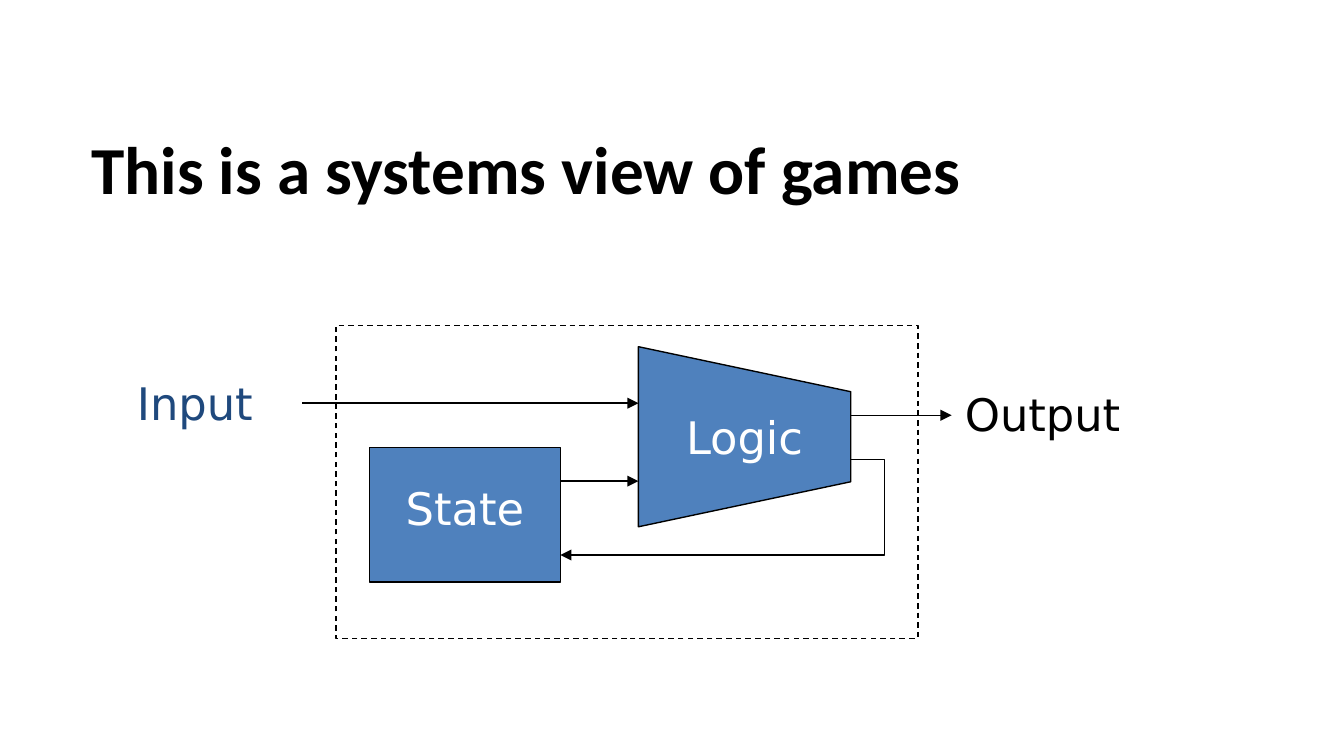
from lxml import etree
from pptx import Presentation
from pptx.dml.color import RGBColor
from pptx.enum.dml import MSO_LINE
from pptx.enum.shapes import MSO_CONNECTOR, MSO_SHAPE
from pptx.enum.text import MSO_ANCHOR, MSO_AUTO_SIZE, PP_ALIGN
from pptx.oxml.ns import qn
from pptx.util import Inches, Pt

BLACK = RGBColor(0x00, 0x00, 0x00)
WHITE = RGBColor(0xFF, 0xFF, 0xFF)
BLUE = RGBColor(0x4F, 0x81, 0xBD)
NAVY = RGBColor(0x1F, 0x49, 0x7D)
TITLE_FONT, LABEL_FONT = "Calibri", "DejaVu Sans"
STRAIGHT, ELBOW = MSO_CONNECTOR.STRAIGHT, MSO_CONNECTOR.ELBOW
RECTANGLE, DASH = MSO_SHAPE.RECTANGLE, MSO_LINE.DASH
LEFT, CENTER, TOP = PP_ALIGN.LEFT, PP_ALIGN.CENTER, MSO_ANCHOR.TOP
FIT_SHAPE, NO_FIT = MSO_AUTO_SIZE.SHAPE_TO_FIT_TEXT, MSO_AUTO_SIZE.NONE
LINE_WIDTH = Pt(0.75)


def write(frame, text, size=24, font=LABEL_FONT, color=BLACK, bold=False,
          align=LEFT, fit=FIT_SHAPE):
    frame.word_wrap = True
    frame.auto_size = fit
    frame.vertical_anchor = TOP
    paragraph = frame.paragraphs[0]
    paragraph.alignment = align
    run = paragraph.add_run()
    run.text = text
    run.font.size = Pt(size)
    run.font.name = font
    run.font.color.rgb = color
    run.font.bold = bold


def add_label(slide, text, left, top, width, **style):
    label = slide.shapes.add_textbox(Inches(left), Inches(top),
                                     Inches(width), Inches(0.5))
    write(label.text_frame, text, **style)


def style_block(block, fill=None, dash=None):
    block.shadow.inherit = False
    if fill is None:
        block.fill.background()
    else:
        block.fill.solid()
        block.fill.fore_color.rgb = fill
    block.line.color.rgb = BLACK
    block.line.width = LINE_WIDTH
    if dash is not None:
        block.line.dash_style = dash


def add_rectangle(slide, left, top, width, height, **style):
    block = slide.shapes.add_shape(RECTANGLE, Inches(left), Inches(top),
                                   Inches(width), Inches(height))
    style_block(block, **style)


def add_arrow(slide, start, end, kind=STRAIGHT, bend=None):
    """Draw an arrow; bend is the elbow's place as a share of its width."""
    arrow = slide.shapes.add_connector(
        kind, *(Inches(value) for value in (*start, *end)))
    arrow.line.color.rgb = BLACK
    arrow.line.width = LINE_WIDTH
    etree.SubElement(arrow.line._get_or_add_ln(), qn("a:tailEnd"), type="triangle")
    properties = arrow._element.spPr
    etree.SubElement(properties, qn("a:effectLst"))
    if bend is not None:
        guides = properties.find(qn("a:prstGeom")).find(qn("a:avLst"))
        etree.SubElement(guides, qn("a:gd"), name="adj1",
                         fmla=f"val {round(bend * 100000)}")


def add_title(slide, text, left, top, width, height):
    title = slide.shapes.title
    title.left, title.top = Inches(left), Inches(top)
    title.width, title.height = Inches(width), Inches(height)
    write(title.text_frame, text, size=36, font=TITLE_FONT, bold=True, fit=NO_FIT)


def add_logic(slide, left, top, width, height):
    """Draw a trapezoid narrowing to the right, with its label."""
    right, bottom, inset = left + width, top + height, height / 4
    outline = slide.shapes.build_freeform(Inches(left), Inches(top), scale=1.0)
    corners = [(right, top + inset), (right, bottom - inset), (left, bottom)]
    outline.add_line_segments([(Inches(x), Inches(y)) for x, y in corners])
    style_block(outline.convert_to_shape(), fill=BLUE)
    add_label(slide, "Logic", left, top + 0.42, width, color=WHITE, align=CENTER)


def add_state(slide, left, top, width, height):
    add_rectangle(slide, left, top, width, height, fill=BLUE)
    add_label(slide, "State", left, top + 0.2, width, color=WHITE, align=CENTER)


def add_system(slide, left, top, width, height):
    """Draw the game system, its input on the left and output on the right."""
    right = left + width
    logic_left, logic_right = left + 2.25, right - 0.5
    state_left, state_right = left + 0.25, left + 1.67

    # Blocks and system boundary
    add_logic(slide, logic_left, top + 0.16, logic_right - logic_left, 1.34)
    add_rectangle(slide, left, top, width, height, dash=DASH)
    add_state(slide, state_left, top + 0.91, state_right - state_left, 1)

    # Input and output
    add_label(slide, "Input", left - 1.58, top + 0.33, 1.33, color=NAVY)
    add_label(slide, "Output", right + 0.25, top + 0.41, 2.08)
    input_y, output_y = top + 0.58, top + 0.67
    add_arrow(slide, (left - 0.25, input_y), (logic_left, input_y))
    add_arrow(slide, (logic_right, output_y), (right + 0.25, output_y))

    # State feeds the logic, which updates the state
    state_y, loop_width = top + 1.16, logic_right - state_right
    add_arrow(slide, (state_right, state_y), (logic_left, state_y))
    add_arrow(slide, (logic_right, top + 1), (state_right, top + 1.71),
              kind=ELBOW, bend=-0.25 / loop_width)


def main():
    deck = Presentation()
    deck.slide_width = Inches(10)
    deck.slide_height = deck.slide_width * 9 // 16
    slide = deck.slides.add_slide(deck.slide_layouts.get_by_name("Title Only"))
    add_title(slide, "This is a systems view of games", 0.58, 0.9, 8.83, 1.19)
    add_system(slide, 2.5, 2.42, 4.33, 2.33)
    deck.save("out.pptx")


if __name__ == "__main__":
    main()
